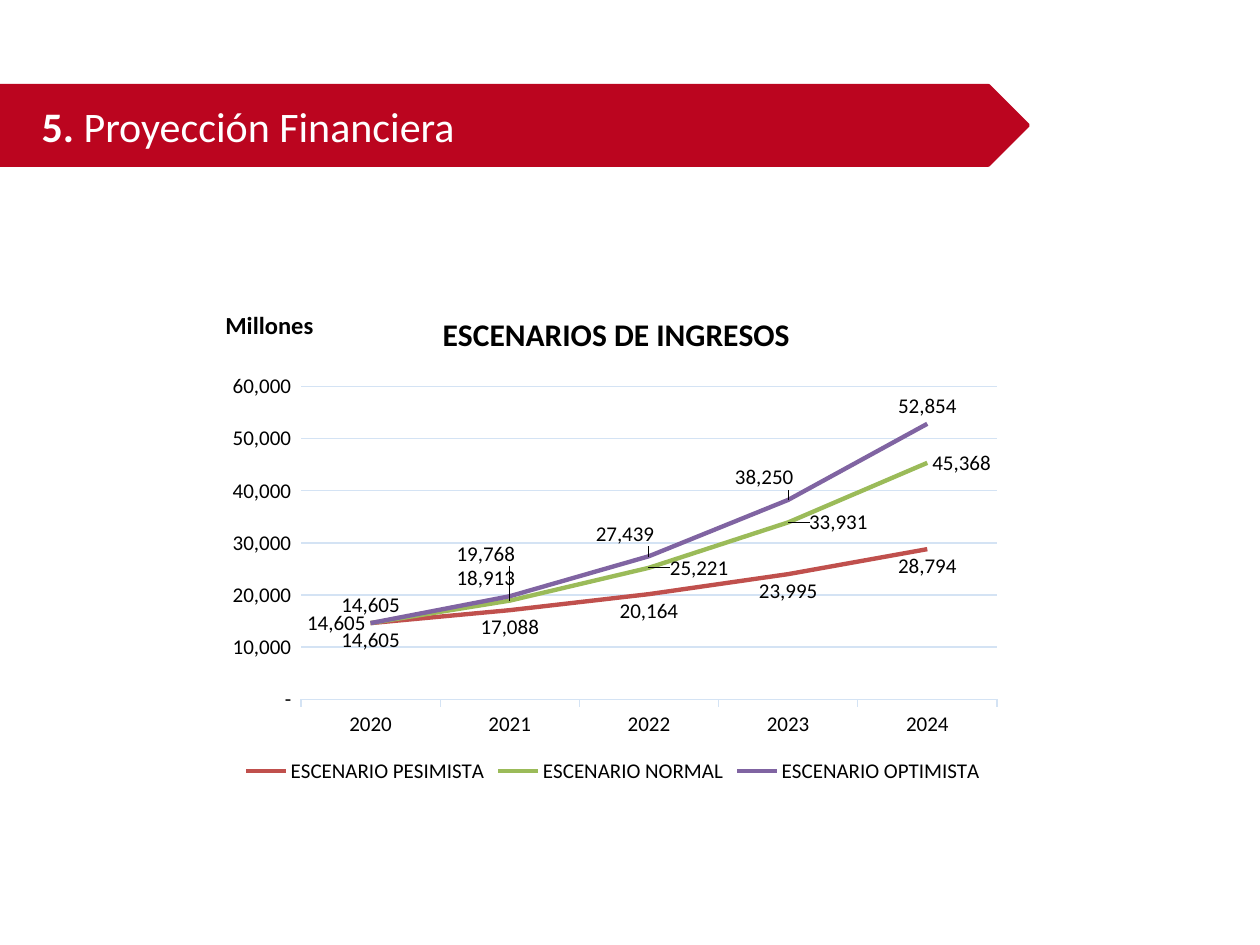
from lxml import etree
from pptx import Presentation
from pptx.chart.data import CategoryChartData
from pptx.dml.color import RGBColor
from pptx.enum.chart import XL_CHART_TYPE, XL_LABEL_POSITION, XL_LEGEND_POSITION, XL_TICK_MARK
from pptx.enum.shapes import MSO_SHAPE
from pptx.enum.text import MSO_ANCHOR, PP_ALIGN
from pptx.oxml.ns import qn
from pptx.util import Inches, Pt

LINE_CHART = XL_CHART_TYPE.LINE
BELOW, RIGHT = XL_LABEL_POSITION.BELOW, XL_LABEL_POSITION.RIGHT
ABOVE, LEFT = XL_LABEL_POSITION.ABOVE, XL_LABEL_POSITION.LEFT
BOTTOM = XL_LEGEND_POSITION.BOTTOM
TICK_NONE, TICK_OUTSIDE = XL_TICK_MARK.NONE, XL_TICK_MARK.OUTSIDE

FONT = "Calibri"
COLORS = {
    "banner": "BB051F", "white": "FFFFFF", "text": "000000", "grid": "D4E3F4",
    "pessimistic": "C0504D", "normal": "9BBB59", "optimistic": "8064A2",
}
TITLE_RUNS = [("5. ", True), ("Proyección Financiera", False)]
CHART_TITLE = "ESCENARIOS DE INGRESOS"
UNIT = "Millones"
YEARS = ["2020", "2021", "2022", "2023", "2024"]
SCENARIOS = [
    ("ESCENARIO PESIMISTA", [14605, 17088, 20164, 23995, 28794], "pessimistic", BELOW),
    ("ESCENARIO NORMAL", [14605, 18913, 25221, 33931, 45368], "normal", RIGHT),
    ("ESCENARIO OPTIMISTA", [14605, 19768, 27439, 38250, 52854], "optimistic", ABOVE),
]
# Labels moved clear of the lines: (color name, year) -> position, x and y shift
MOVED_LABELS = {
    ("normal", "2020"): (LEFT, 0, 0),
    ("normal", "2021"): (ABOVE, -0.03, -0.01),
    ("normal", "2022"): (RIGHT, 0.02, 0),
    ("normal", "2023"): (RIGHT, 0.02, 0),
    ("optimistic", "2021"): (ABOVE, -0.03, -0.05),
    ("optimistic", "2022"): (ABOVE, -0.03, -0.01),
    ("optimistic", "2023"): (ABOVE, -0.03, -0.01),
}
AXIS_FORMAT = '_(* #,##0_);_(* \\(#,##0\\);_(* "-"_);_(@_)'
BANNER_BOX = [Inches(n) for n in (0, 0.68, 8.16, 0.63)]
TITLE_BOX = [Inches(n) for n in (0.23, 0.68, 7.5, 0.63)]
CHART_BOX = [Inches(n) for n in (1.69, 2.32, 6.35, 3.94)]
UNIT_BOX = [Inches(n) for n in (1.69, 2.41, 1.33, 0.34)]


def color(name):
    return RGBColor.from_string(COLORS[name])


def style_font(font, size, name="text", bold=False):
    font.name, font.size, font.bold = FONT, Pt(size), bold
    font.color.rgb = color(name)


def style_line(line, name, width):
    line.color.rgb = color(name)
    line.width = Pt(width)


def set_layout(parent, index, from_edge=True, **values):
    """Place a chart part by fractions of the chart area, or shift it from its usual place."""
    for old in parent.findall(qn("c:layout")):
        parent.remove(old)
    layout = etree.Element(qn("c:layout"))
    parent.insert(index, layout)
    manual = etree.SubElement(layout, qn("c:manualLayout"))
    if "w" in values:
        etree.SubElement(manual, qn("c:layoutTarget")).set("val", "inner")
    if from_edge:
        for mode in ("xMode", "yMode"):
            etree.SubElement(manual, qn(f"c:{mode}")).set("val", "edge")
    for key, value in values.items():
        etree.SubElement(manual, qn(f"c:{key}")).set("val", str(value))


def add_banner(slide):
    banner = slide.shapes.add_shape(MSO_SHAPE.PENTAGON, *BANNER_BOX)
    banner.shadow.inherit = False
    banner.fill.solid()
    banner.fill.fore_color.rgb = color("banner")
    style_line(banner.line, "banner", 2)

    title = slide.shapes.title
    title.left, title.top, title.width, title.height = TITLE_BOX
    slide.shapes._spTree.append(title._element)  # bring the title in front of the banner
    title.text_frame.vertical_anchor = MSO_ANCHOR.MIDDLE
    paragraph = title.text_frame.paragraphs[0]
    paragraph.alignment = PP_ALIGN.LEFT
    for text, bold in TITLE_RUNS:
        run = paragraph.add_run()
        run.text = text
        style_font(run.font, 24, "white", bold)


def style_labels(series, name, position):
    labels = series.data_labels
    labels.show_value = True
    labels.position = position
    labels.number_format = "#,##0"
    labels.number_format_is_linked = False
    style_font(labels.font, 12)
    for index, year in enumerate(YEARS):
        if (name, year) not in MOVED_LABELS:
            continue
        label_position, x, y = MOVED_LABELS[name, year]
        label = series.points[index].data_label
        style_font(label.font, 12)
        label.position = label_position
        if x or y:
            element = labels._element.find(f"{qn('c:dLbl')}[{qn('c:idx')}][last()]")
            set_layout(element, 1, from_edge=False, x=x, y=y)


def add_income_chart(slide):
    data = CategoryChartData(number_format="#,##0")
    data.categories = YEARS
    for name, values, _, _ in SCENARIOS:
        data.add_series(name, values)
    chart = slide.shapes.add_chart(LINE_CHART, *CHART_BOX, data).chart
    style_font(chart.font, 12)

    chart.has_title = True
    title_frame = chart.chart_title.text_frame
    title_frame.text = CHART_TITLE
    style_font(title_frame.paragraphs[0].runs[0].font, 18, bold=True)
    set_layout(chart.chart_title._element, 1, x=0.28, y=0.03)
    set_layout(chart._chartSpace.chart.plotArea, 0, x=0.11, y=0.19, w=0.87, h=0.63)

    chart.has_legend = True
    chart.legend.position = BOTTOM
    chart.legend.include_in_layout = False
    style_font(chart.legend.font, 12)

    years = chart.category_axis
    years.major_tick_mark = TICK_OUTSIDE
    style_line(years.format.line, "grid", 0.75)
    amounts = chart.value_axis
    amounts.minimum_scale, amounts.maximum_scale, amounts.major_unit = 0, 60000, 10000
    amounts.major_tick_mark = TICK_NONE
    amounts.format.line.fill.background()
    style_line(amounts.major_gridlines.format.line, "grid", 0.75)
    amounts.tick_labels.number_format = AXIS_FORMAT
    amounts.tick_labels.number_format_is_linked = False
    for axis in (years, amounts):
        style_font(axis.tick_labels.font, 12)

    plot = chart.plots[0]
    plot.vary_by_categories = False
    for series, (_, _, name, position) in zip(plot.series, SCENARIOS):
        series.smooth = False
        style_line(series.format.line, name, 2.5)
        style_labels(series, name, position)


def add_unit(slide):
    frame = slide.shapes.add_textbox(*UNIT_BOX).text_frame
    frame.word_wrap = True
    paragraph = frame.paragraphs[0]
    paragraph.text = UNIT
    style_font(paragraph.font, 14, bold=True)


def main():
    presentation = Presentation()
    presentation.slide_width, presentation.slide_height = Inches(10), Inches(7.5)
    slide = presentation.slides.add_slide(presentation.slide_layouts[5])
    add_banner(slide)
    add_income_chart(slide)
    add_unit(slide)
    presentation.save("out.pptx")


if __name__ == "__main__":
    main()
